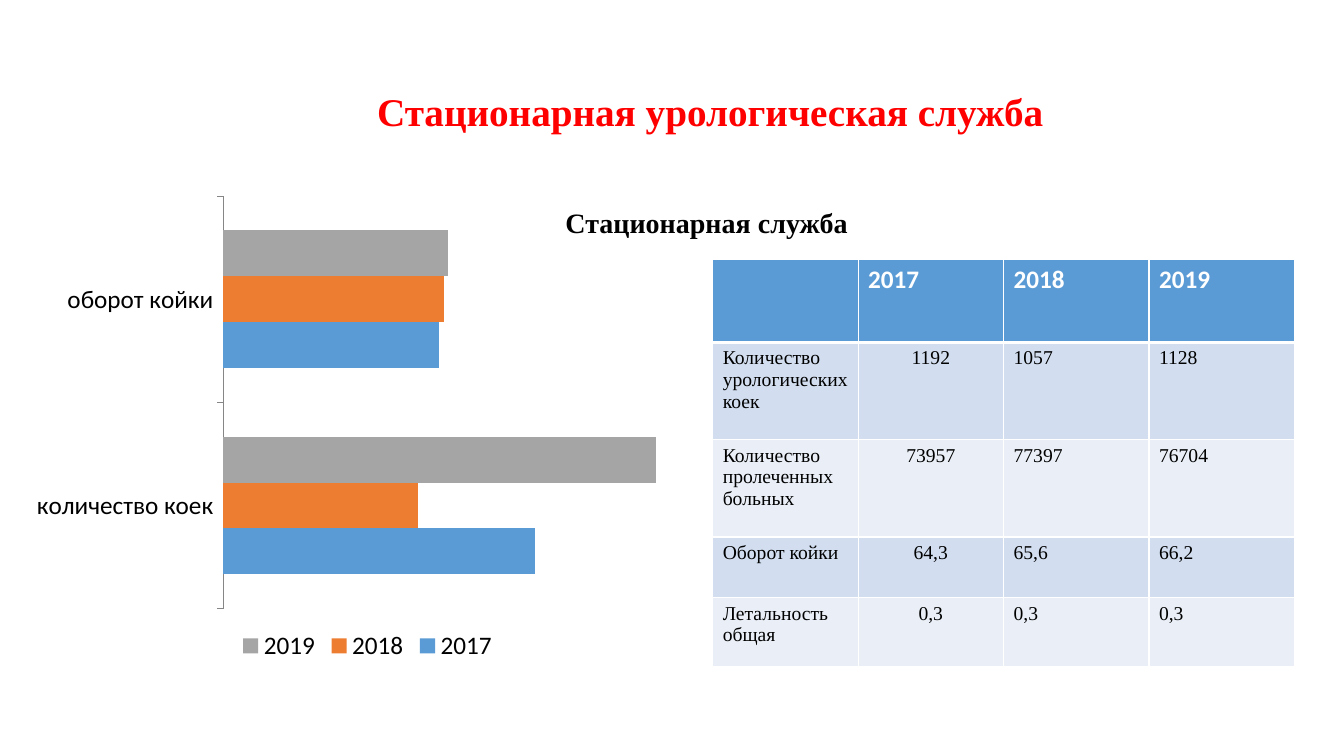
from lxml import etree
from pptx import Presentation
from pptx.chart.data import CategoryChartData
from pptx.dml.color import RGBColor
from pptx.enum.chart import XL_CHART_TYPE, XL_LEGEND_POSITION, XL_TICK_LABEL_POSITION, XL_TICK_MARK
from pptx.enum.text import MSO_ANCHOR, MSO_AUTO_SIZE, PP_ALIGN
from pptx.oxml.ns import qn
from pptx.util import Cm, Pt

BAR_CLUSTERED = XL_CHART_TYPE.BAR_CLUSTERED
LEGEND_BOTTOM = XL_LEGEND_POSITION.BOTTOM
LABELS_LOW = XL_TICK_LABEL_POSITION.LOW
TICK_OUTSIDE, TICK_NONE = XL_TICK_MARK.OUTSIDE, XL_TICK_MARK.NONE
MIDDLE = MSO_ANCHOR.MIDDLE
FIT_SHAPE, NO_FIT = MSO_AUTO_SIZE.SHAPE_TO_FIT_TEXT, MSO_AUTO_SIZE.NONE
LEFT, CENTER = PP_ALIGN.LEFT, PP_ALIGN.CENTER

RED = RGBColor(0xFF, 0x00, 0x00)
BLACK = RGBColor(0x00, 0x00, 0x00)
WHITE = RGBColor(0xFF, 0xFF, 0xFF)
BLUE = RGBColor(0x5B, 0x9B, 0xD5)
ORANGE = RGBColor(0xED, 0x7D, 0x31)
GRAY = RGBColor(0xA5, 0xA5, 0xA5)
AXIS_GRAY = RGBColor(0x86, 0x86, 0x86)
BAND_DARK = RGBColor(0xD2, 0xDE, 0xEF)
BAND_LIGHT = RGBColor(0xEA, 0xEF, 0xF7)
SERIF, SANS = "Times New Roman", "Calibri"

CATEGORIES = ["количество коек", "оборот койки"]
SERIES = [("2017", (72, 50), BLUE), ("2018", (45, 51), ORANGE), ("2019", (100, 52), GRAY)]
PLOT_AREA = {"x": 0.29, "y": 0.02, "w": 0.63, "h": 0.86}

TABLE_ROWS = [
    ("", "2017", "2018", "2019"),
    ("Количество урологических коек", "1192", "1057", "1128"),
    ("Количество пролеченных больных", "73957", "77397", "76704"),
    ("Оборот койки", "64,3", "65,6", "66,2"),
    ("Летальность общая", "0,3", "0,3", "0,3"),
]
ROW_HEIGHTS = [2.1, 2.45, 2.45, 1.53, 1.73]


def write(frame, text, size, font=SERIF, color=BLACK, bold=False, align=LEFT):
    para = frame.paragraphs[0]
    para.alignment = align
    span = para.add_run()
    span.text = text
    span.font.name, span.font.size = font, Pt(size)
    span.font.bold, span.font.color.rgb = bold, color
    return para


def place(shape, box):
    shape.left, shape.top, shape.width, shape.height = map(Cm, box)


def add_title(page, box):
    title = page.shapes.title
    place(title, box)
    frame = title.text_frame
    frame.auto_size, frame.vertical_anchor = NO_FIT, MIDDLE
    para = write(frame, "Стационарная урологическая служба", 28,
                 color=RED, bold=True, align=CENTER)
    para.line_spacing = 0.9


def add_subtitle(page, box):
    frame = page.shapes.add_textbox(*map(Cm, box)).text_frame
    frame.word_wrap, frame.auto_size = True, FIT_SHAPE
    write(frame, "Стационарная служба", 20, bold=True)


def fix_plot_area(chart):
    """Pin the inner plot area to fractions of the chart."""
    plot_area = chart.element.find(".//" + qn("c:plotArea"))
    for old in plot_area.findall(qn("c:layout")):
        plot_area.remove(old)
    layout = etree.Element(qn("c:layout"))
    manual = etree.SubElement(layout, qn("c:manualLayout"))
    settings = [("layoutTarget", "inner"), ("xMode", "edge"), ("yMode", "edge")]
    for name, value in settings + list(PLOT_AREA.items()):
        etree.SubElement(manual, qn("c:" + name)).set("val", str(value))
    plot_area.insert(0, layout)


def add_bed_chart(page, box):
    data = CategoryChartData()
    data.categories = CATEGORIES
    for name, values, _ in SERIES:
        data.add_series(name, values)
    chart = page.shapes.add_chart(BAR_CLUSTERED, *map(Cm, box), data).chart
    chart.has_title = False
    chart.font.name, chart.font.size, chart.font.color.rgb = SANS, Pt(18), BLACK
    chart.has_legend = True
    chart.legend.position = LEGEND_BOTTOM
    chart.legend.include_in_layout = False

    plot = chart.plots[0]
    plot.gap_width, plot.overlap, plot.vary_by_categories = 150, 0, False
    for series, (_, _, color) in zip(plot.series, SERIES):
        series.format.fill.solid()
        series.format.fill.fore_color.rgb = color

    value_axis = chart.value_axis
    value_axis.visible, value_axis.has_major_gridlines = False, False
    value_axis.minimum_scale, value_axis.maximum_scale = 0, 100
    category_axis = chart.category_axis
    category_axis.major_tick_mark, category_axis.minor_tick_mark = TICK_OUTSIDE, TICK_NONE
    category_axis.tick_label_position = LABELS_LOW
    category_axis.format.line.color.rgb = AXIS_GRAY
    category_axis.format.line.width = Pt(0.75)
    fix_plot_area(chart)


def add_borders(cell, bottom):
    """Draw white cell borders, one point wide but for the bottom one."""
    properties = cell._tc.get_or_add_tcPr()
    for side, width in (("L", 1), ("R", 1), ("T", 1), ("B", bottom)):
        line = etree.SubElement(properties, qn("a:ln" + side), w=str(Pt(width)))
        fill = etree.SubElement(line, qn("a:solidFill"))
        etree.SubElement(fill, qn("a:srgbClr"), val=str(WHITE))


def add_service_table(page, box):
    columns = len(TABLE_ROWS[0])
    table = page.shapes.add_table(len(TABLE_ROWS), columns, *map(Cm, box)).table
    for column in table.columns:
        column.width = Cm(box[2] / columns)
    for r, (height, texts) in enumerate(zip(ROW_HEIGHTS, TABLE_ROWS)):
        table.rows[r].height = Cm(height)
        header = r == 0
        band = BLUE if header else BAND_DARK if r % 2 else BAND_LIGHT
        for c, text in enumerate(texts):
            cell = table.cell(r, c)
            add_borders(cell, bottom=3 if header else 1)
            cell.fill.solid()
            cell.fill.fore_color.rgb = band
            if header and text:
                write(cell.text_frame, text, 18, font=SANS, color=WHITE, bold=True)
            elif text:
                write(cell.text_frame, text, 14, align=CENTER if c == 1 else LEFT)


def main():
    deck = Presentation()
    deck.slide_width, deck.slide_height = Cm(33.87), Cm(19.05)
    page = deck.slides.add_slide(deck.slide_layouts.get_by_name("Title Only"))
    add_title(page, (3.2, 1.02, 29.39, 3.68))
    add_bed_chart(page, (0.61, 4.7, 17.3, 12.09))
    add_subtitle(page, (14, 5.05, 11.56, 1.12))
    add_service_table(page, (17.96, 6.53, 14.66, 10.26))
    deck.save("out.pptx")


if __name__ == "__main__":
    main()
